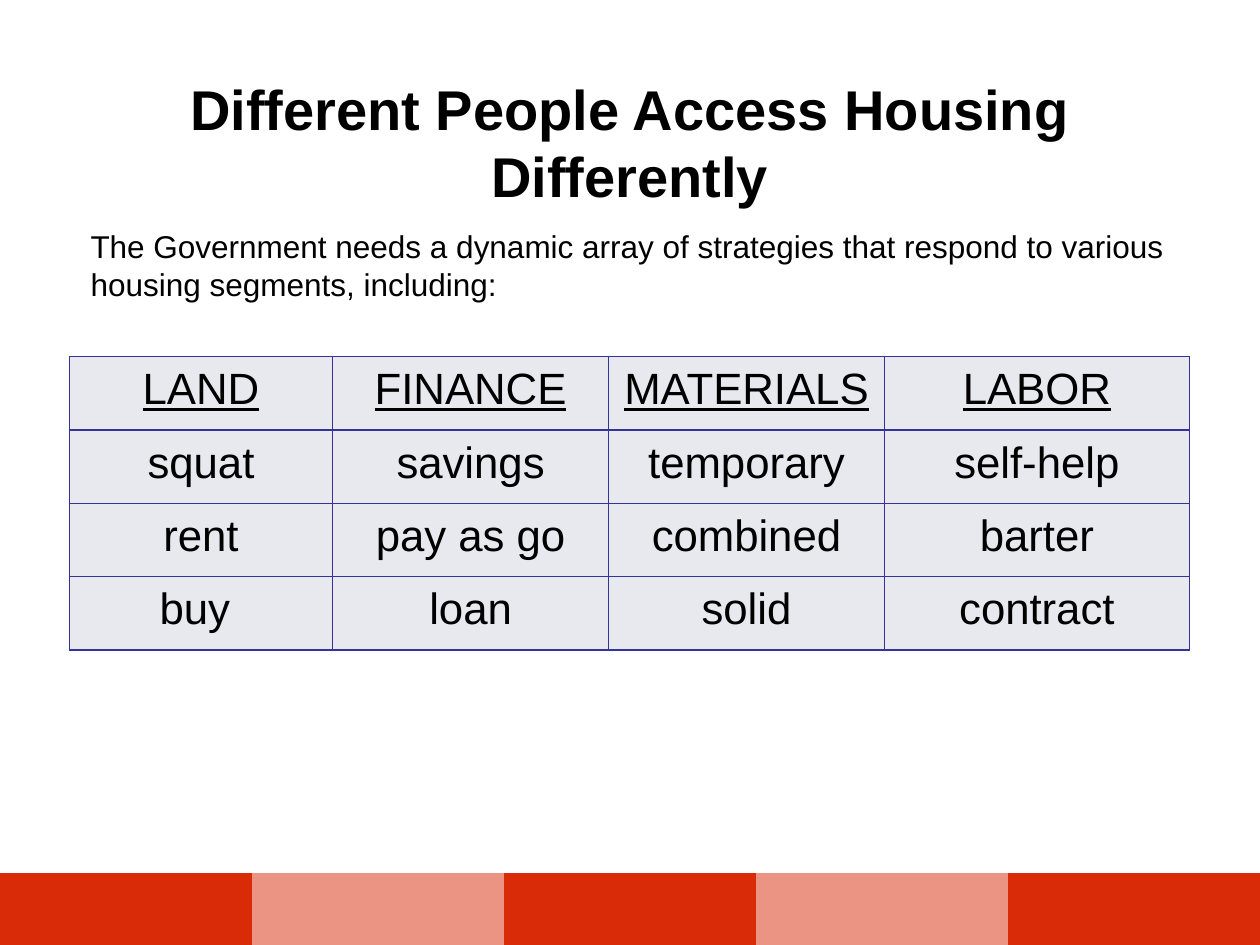
from dataclasses import dataclass

from lxml import etree
from pptx import Presentation
from pptx import util as u
from pptx.dml.color import RGBColor
from pptx.enum import text
from pptx.oxml import ns


@dataclass(frozen=True)
class Theme:
    font: str = "Arial"
    ink: str = "000000"
    cell: str = "E8E8EF"
    border: str = "333399"
    band: str = "DA2B08"
    title_size: int = 32
    table_size: int = 25
    body_size: int = 18


THEME = Theme()
OPTIONS = [
    ["LAND", "FINANCE", "MATERIALS", "LABOR"],
    ["squat", "savings", "temporary", "self-help"],
    ["rent", "pay as go", "combined", "barter"],
    ["buy ", "loan", "solid", "contract"],
]


def write(tf, words, size, align=text.PP_ALIGN.LEFT, bold=False, underline=False):
    p = tf.paragraphs[0]
    p.alignment = align
    r = p.add_run()
    r.text = words
    r.font.name = THEME.font
    r.font.size = u.Pt(size)
    r.font.bold = bold
    r.font.underline = underline
    r.font.color.rgb = RGBColor.from_string(THEME.ink)


def add_text(s, box, words, size, anchor=text.MSO_ANCHOR.TOP, **style):
    tf = s.shapes.add_textbox(*map(u.Inches, box)).text_frame
    tf.word_wrap = True
    tf.vertical_anchor = anchor
    write(tf, words, size, **style)
    return tf


def set_borders(cell, color=None):
    tc_pr = cell._tc.get_or_add_tcPr()
    for side in ("L", "R", "T", "B"):
        ln = etree.SubElement(tc_pr, ns.qn(f"a:ln{side}"), w=str(u.Pt(1)))
        if color:
            fill = etree.SubElement(ln, ns.qn("a:solidFill"))
            etree.SubElement(fill, ns.qn("a:srgbClr"), val=color)
        else:
            etree.SubElement(ln, ns.qn("a:noFill"))


def fill_cell(cell, color, alpha=None):
    cell.fill.solid()
    cell.fill.fore_color.rgb = RGBColor.from_string(color)
    if alpha is not None:
        clr = cell._tc.tcPr.find(".//" + ns.qn("a:srgbClr") + f"[@val='{color}']")
        etree.SubElement(clr, ns.qn("a:alpha"), val=str(alpha * 1000))


def add_grid(s, box, rows, widths):
    table = s.shapes.add_table(rows, len(widths), *map(u.Inches, box)).table
    table.first_row = False
    table.horz_banding = False
    for column, width in zip(table.columns, widths):
        column.width = u.Inches(width)
    return table


def add_options(s):
    table = add_grid(s, (0.55, 2.83, 8.9, 2.33), len(OPTIONS), [2.09, 2.19, 2.19, 2.42])
    for i, row in enumerate(OPTIONS):
        for j, words in enumerate(row):
            cell = table.cell(i, j)
            cell.margin_left = cell.margin_right = u.Inches(0.07)
            cell.margin_top = cell.margin_bottom = u.Inches(0.07)
            set_borders(cell, THEME.border)
            fill_cell(cell, THEME.cell)
            write(cell.text_frame, words, THEME.table_size,
                  align=text.PP_ALIGN.CENTER, underline=i == 0)


def add_band(s):
    table = add_grid(s, (0, 6.93, 10, 0.57), 1, [2] * 5)
    for i, cell in enumerate(table.iter_cells()):
        set_borders(cell)
        fill_cell(cell, THEME.band, alpha=50 if i % 2 else None)


def main():
    prs = Presentation()
    prs.slide_width, prs.slide_height = u.Inches(10), u.Inches(7.5)
    s = prs.slides.add_slide(prs.slide_layouts[6])
    add_options(s)
    add_text(s, (0.5, 0.5, 9, 1.25), "Different People Access Housing Differently",
             THEME.title_size, anchor=text.MSO_ANCHOR.MIDDLE,
             align=text.PP_ALIGN.CENTER, bold=True)
    intro = add_text(s, (0.62, 1.75, 8.75, 0.71),
                     "The Government needs a dynamic array of strategies that respond "
                     "to various housing segments, including:", THEME.body_size)
    intro.auto_size = text.MSO_AUTO_SIZE.SHAPE_TO_FIT_TEXT
    add_band(s)
    prs.save("out.pptx")


if __name__ == "__main__":
    main()
